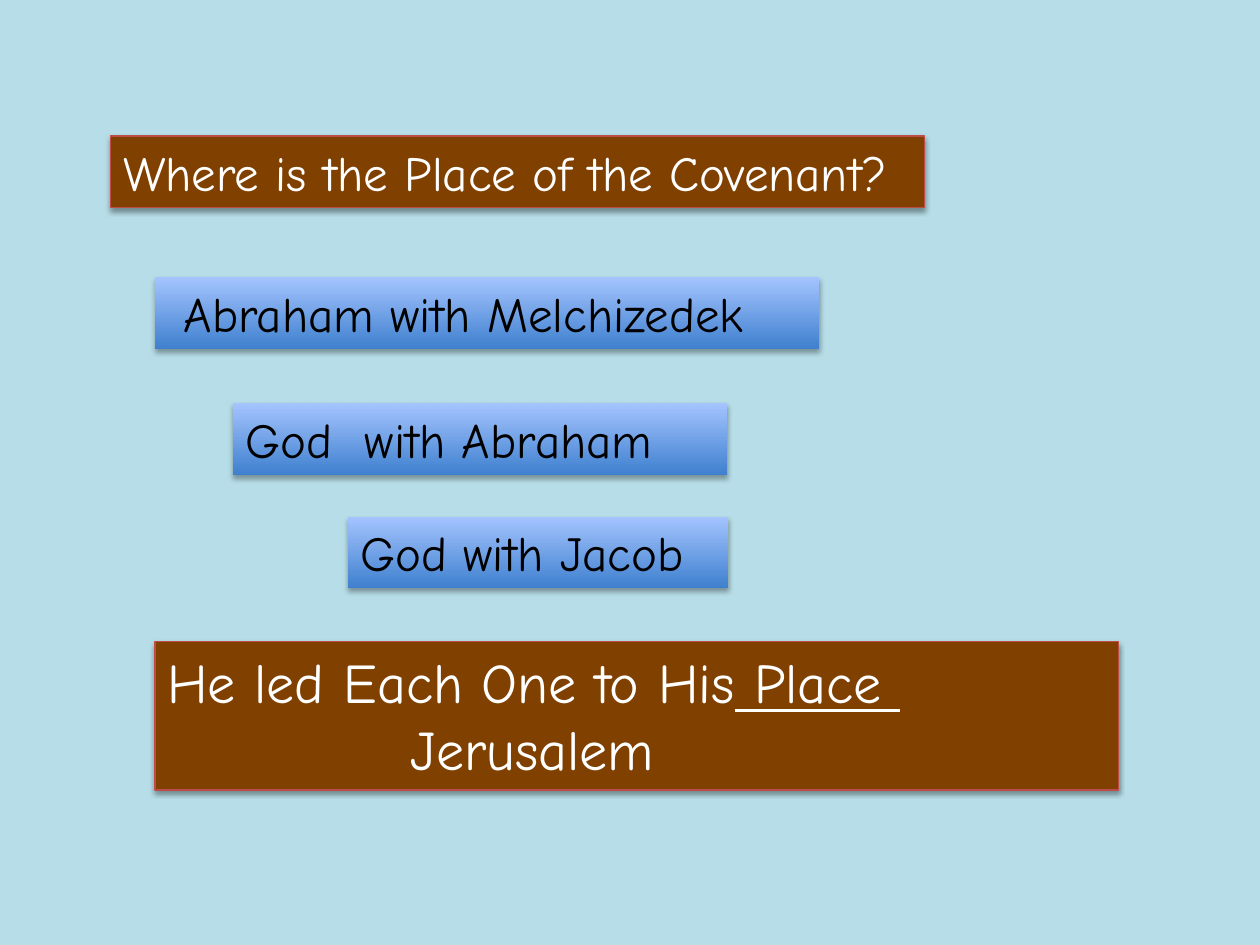
import pptx
import pptx.dml.color
import pptx.enum.shapes
import pptx.enum.text
import pptx.oxml.ns
import pptx.util
from lxml import etree
from pptx.util import Inches

RGBColor = pptx.dml.color.RGBColor
SKY = RGBColor(0xB7, 0xDE, 0xE8)
BROWN = RGBColor(0x80, 0x40, 0x00)
RED = RGBColor(0xBF, 0x4C, 0x48)
DEEP_BLUE = RGBColor(0x3F, 0x80, 0xCE)
PALE_BLUE = RGBColor(0xA4, 0xC4, 0xFF)
WHITE = RGBColor(0xFF, 0xFF, 0xFF)
BLACK = RGBColor(0x00, 0x00, 0x00)

FONT = "Comic Neue"
LINE_HEIGHT = 0.57


def add_shadow(shape, distance, opacity):
    """Cast a soft black shadow straight down; distance in points, opacity in percent."""
    shape.shadow.inherit = False
    effects = shape._element.spPr.find(pptx.oxml.ns.qn("a:effectLst"))
    shadow = etree.SubElement(
        effects, pptx.oxml.ns.qn("a:outerShdw"),
        blurRad=str(pptx.util.Pt(3.1)), dist=str(pptx.util.Pt(distance)),
        dir=str(90 * 60000), rotWithShape="0")
    color = etree.SubElement(shadow, pptx.oxml.ns.qn("a:srgbClr"), val=str(BLACK))
    etree.SubElement(color, pptx.oxml.ns.qn("a:alpha"), val=str(opacity * 1000))


def add_box(slide, left, top, width, height):
    return slide.shapes.add_shape(
        pptx.enum.shapes.MSO_SHAPE.RECTANGLE,
        Inches(left), Inches(top), Inches(width), Inches(height))


def write_line(shape, text, size=28, color=BLACK, indent=0, underlined="", new=False):
    """Write one line, followed by an optional underlined part."""
    frame = shape.text_frame
    frame.word_wrap = True
    frame.vertical_anchor = pptx.enum.text.MSO_ANCHOR.TOP
    paragraph = frame.add_paragraph() if new else frame.paragraphs[0]
    paragraph.alignment = pptx.enum.text.PP_ALIGN.LEFT
    paragraph._p.get_or_add_pPr().set("marL", str(Inches(indent)))
    for part, underline in ((text, False), (underlined, True)):
        if part:
            run = paragraph.add_run()
            run.text = part
            run.font.name = FONT
            run.font.size = pptx.util.Pt(size)
            run.font.color.rgb = color
            run.font.underline = underline


def add_background(slide, width, height):
    background = add_box(slide, 0, 0, width, height)
    background.fill.solid()
    background.fill.fore_color.rgb = SKY
    background.line.fill.background()
    add_shadow(background, 1.8, 35)


def add_brown_box(slide, left, top, width, height):
    box = add_box(slide, left, top, width, height)
    box.fill.solid()
    box.fill.fore_color.rgb = BROWN
    box.line.color.rgb = RED
    box.line.width = pptx.util.Pt(0.75)
    add_shadow(box, 1.6, 38)
    return box


def add_meeting(slide, left, top, width, text, indent=0):
    box = add_box(slide, left, top, width, LINE_HEIGHT)
    box.fill.gradient()
    box.fill.gradient_angle = 90
    for stop, color in zip(box.fill.gradient_stops, (DEEP_BLUE, PALE_BLUE)):
        stop.color.rgb = color
    box.line.fill.background()
    add_shadow(box, 1.8, 35)
    write_line(box, text, indent=indent)


def add_question(slide, left, top, width):
    box = add_brown_box(slide, left, top, width, LINE_HEIGHT)
    write_line(box, "Where is the Place of the Covenant?", color=WHITE)


def add_answer(slide, left, top, width, height):
    box = add_brown_box(slide, left, top, width, height)
    write_line(box, "He led Each One to His", size=32, color=WHITE, underlined=" Place ")
    write_line(box, "Jerusalem", size=32, color=WHITE, indent=1.93, new=True)


def main():
    presentation = pptx.Presentation()
    presentation.slide_width = Inches(10)
    presentation.slide_height = Inches(7.5)
    slide = presentation.slides.add_slide(presentation.slide_layouts[6])

    add_background(slide, 10, 7.5)
    add_question(slide, 0.88, 1.08, 6.46)
    add_meeting(slide, 1.23, 2.2, 5.27, "Abraham with Melchizedek", indent=0.13)
    add_meeting(slide, 1.85, 3.2, 3.92, "God  with Abraham")
    add_meeting(slide, 2.76, 4.1, 3.02, "God with Jacob")
    add_answer(slide, 1.23, 5.09, 7.65, 1.18)
    presentation.save("out.pptx")


if __name__ == "__main__":
    main()
